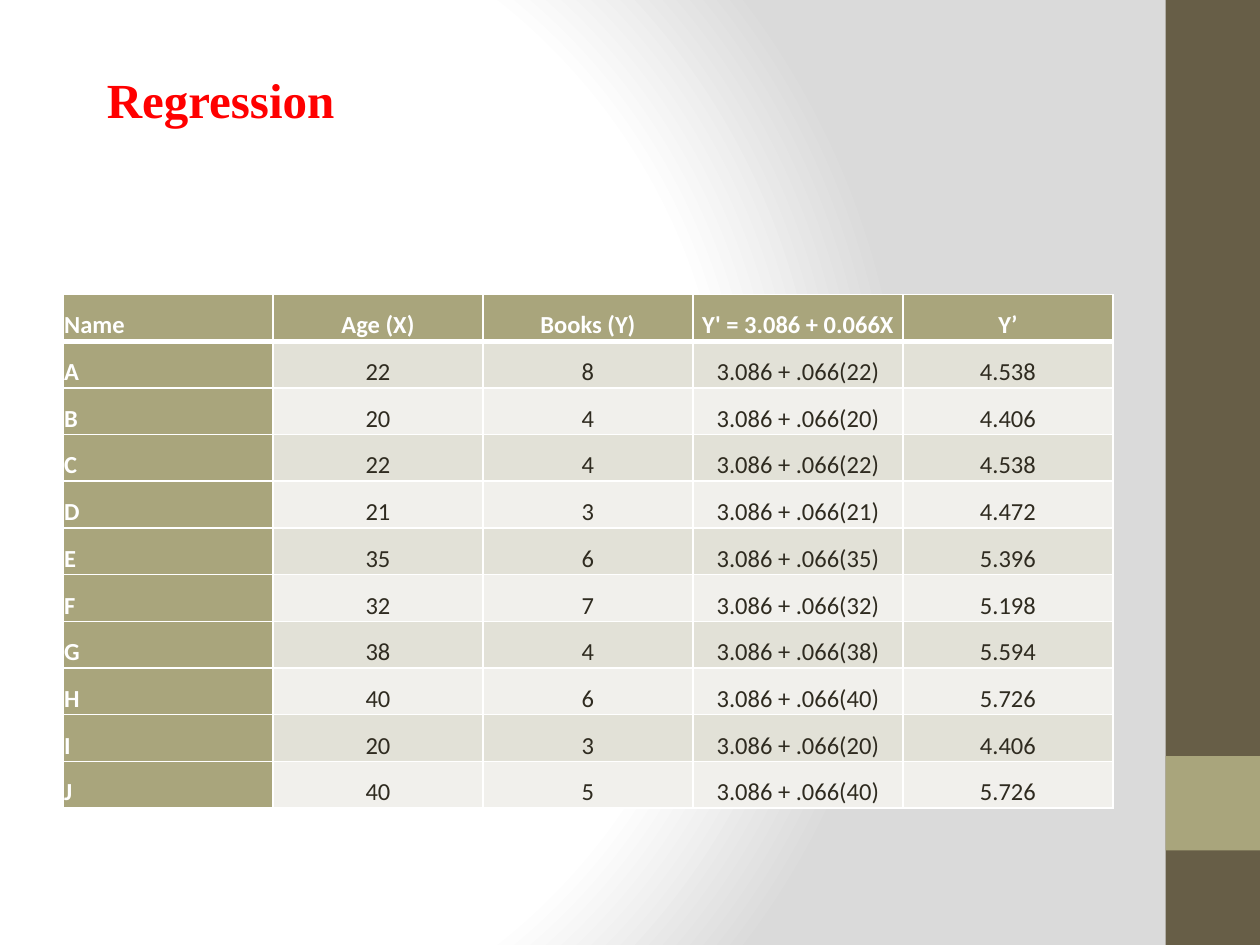
from pptx import Presentation
from pptx import util as u
from pptx.dml.color import RGBColor
from pptx.enum import shapes, text
from pptx.oxml import parse_xml
from pptx.oxml.ns import nsdecls

WHITE, DARK, OLIVE, BROWN = "FFFFFF", "2F2B20", "A9A57C", "675E47"
BANDS = ("E2E1D7", "F1F0EC")
INTERCEPT, SLOPE = 3.086, 0.066
HEADINGS = ("Name", "Age (X)", "Books (Y)", "Y' = 3.086 + 0.066X", "Y’")
READERS = (("A", 22, 8), ("B", 20, 4), ("C", 22, 4), ("D", 21, 3), ("E", 35, 6),
           ("F", 32, 7), ("G", 38, 4), ("H", 40, 6), ("I", 20, 3), ("J", 40, 5))
TOP, MIDDLE, BOTTOM = (text.MSO_ANCHOR.TOP, text.MSO_ANCHOR.MIDDLE,
                       text.MSO_ANCHOR.BOTTOM)
HEADING_ANCHORS = (BOTTOM, BOTTOM, BOTTOM, MIDDLE, MIDDLE)
BODY_ANCHORS = (MIDDLE, MIDDLE, MIDDLE, TOP, MIDDLE)


def set_color(color_format, value):
    color_format.rgb = RGBColor.from_string(value)


def set_fill(fill, value):
    fill.solid()
    set_color(fill.fore_color, value)


def add_run(paragraph, words, font_name, size, color, bold):
    run = paragraph.add_run()
    run.text = words
    run.font.name = font_name
    run.font.size = u.Pt(size)
    run.font.bold = bold
    set_color(run.font.color, color)


def paint_background(slide):
    """Fade from white to grey, in circles around a point left of centre."""
    fill = slide.background.fill
    fill.solid()
    solid = slide.background._cSld.bg.bgPr[0]
    stops = "".join(
        f'<a:gs pos="{position * 1000}"><a:srgbClr val="{color}"/></a:gs>'
        for position, color in ((0, WHITE), (75, WHITE), (100, "DADADA")))
    gradient = parse_xml(
        f'<a:gradFill {nsdecls("a")} rotWithShape="1"><a:gsLst>{stops}</a:gsLst>'
        '<a:path path="circle"><a:fillToRect l="20000" t="50000" r="100000" '
        'b="50000"/></a:path></a:gradFill>')
    solid.getparent().replace(solid, gradient)


def add_side_band(slide, left, top, width, height):
    """A full-height bar with a square accent one width above its foot."""
    for y, part_height, color in ((top, height, BROWN),
                                  (top + height - 2 * width, width, OLIVE)):
        bar = slide.shapes.add_shape(
            shapes.MSO_SHAPE.RECTANGLE,
            u.Pt(left), u.Pt(y), u.Pt(width), u.Pt(part_height))
        bar.shadow.inherit = False
        set_fill(bar.fill, color)
        bar.line.fill.background()


def add_title(slide, left, top, width, height):
    box = slide.shapes.add_textbox(u.Pt(left), u.Pt(top), u.Pt(width), u.Pt(height))
    frame = box.text_frame
    frame.word_wrap = True
    frame.auto_size = text.MSO_AUTO_SIZE.SHAPE_TO_FIT_TEXT
    add_run(frame.paragraphs[0], "Regression", "Times New Roman", 28, "FF0000", True)


def add_borders(cell, bottom_width):
    properties = cell._tc.get_or_add_tcPr()
    for side, width in (("L", 1), ("R", 1), ("T", 1), ("B", bottom_width)):
        properties.append(parse_xml(
            f'<a:ln{side} {nsdecls("a")} w="{u.Pt(width)}"><a:solidFill>'
            f'<a:srgbClr val="{WHITE}"/></a:solidFill></a:ln{side}>'))


def fill_cell(cell, words, row, column):
    is_heading = row == 0
    is_label = is_heading or column == 0
    add_borders(cell, 3 if is_heading else 1)
    set_fill(cell.fill, OLIVE if is_label else BANDS[(row - 1) % 2])
    cell.margin_left = cell.margin_right = u.Pt(0.72)
    cell.margin_top = cell.margin_bottom = u.Pt(0.72)
    cell.vertical_anchor = (HEADING_ANCHORS if is_heading else BODY_ANCHORS)[column]
    paragraph = cell.text_frame.paragraphs[0]
    paragraph.line_spacing = 1.5
    paragraph.alignment = (text.PP_ALIGN.CENTER if column
                           else text.PP_ALIGN.JUSTIFY)
    add_run(paragraph, words, "Calibri", 14, WHITE if is_label else DARK, is_label)


def add_prediction_table(slide, left, top, width, height):
    rows = [HEADINGS] + [
        (name, str(age), str(books), f"3.086 + .066({age})",
         f"{INTERCEPT + SLOPE * age:.3f}")
        for name, age, books in READERS]
    table = slide.shapes.add_table(
        len(rows), len(HEADINGS),
        u.Pt(left), u.Pt(top), u.Pt(width), u.Pt(height)).table
    table.first_col = True
    for row, values in enumerate(rows):
        for column, words in enumerate(values):
            fill_cell(table.cell(row, column), words, row, column)


def main():
    presentation = Presentation()
    presentation.slide_width, presentation.slide_height = u.Pt(720), u.Pt(540)
    slide = presentation.slides.add_slide(presentation.slide_layouts[6])
    paint_background(slide)
    add_side_band(slide, 666, 0, 54, 540)
    add_title(slide, 54, 36, 408, 41)
    add_prediction_table(slide, 36, 168.3, 600, 293.7)
    presentation.save("out.pptx")


if __name__ == "__main__":
    main()
